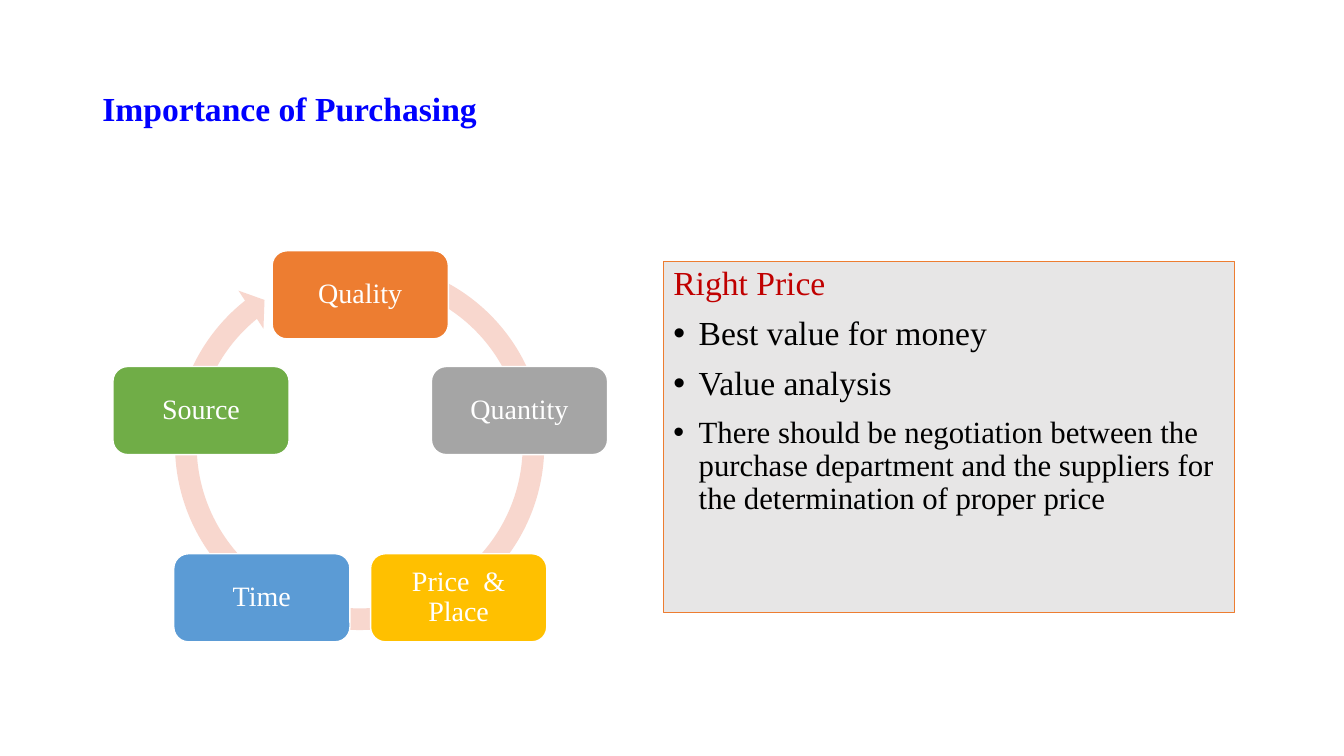
import math

from lxml import etree
from pptx import Presentation
from pptx.dml.color import RGBColor
from pptx.enum.shapes import MSO_SHAPE
from pptx.enum.text import MSO_ANCHOR, PP_ALIGN
from pptx.oxml.ns import qn
from pptx.util import Cm, Pt

RECTANGLE = MSO_SHAPE.RECTANGLE
ROUNDED = MSO_SHAPE.ROUNDED_RECTANGLE
CIRCULAR_ARROW = MSO_SHAPE.CIRCULAR_ARROW
MIDDLE, TOP = MSO_ANCHOR.MIDDLE, MSO_ANCHOR.TOP
LEFT, CENTER = PP_ALIGN.LEFT, PP_ALIGN.CENTER

FONT = "Times New Roman"
CYCLE_CENTER = (9.08, 11.65)
CYCLE_RADIUS = 4.22
NODE_SIZE = (4.44, 2.22)
NODES = [
    ("Quality", "ED7D31"),
    ("Quantity", "A5A5A5"),
    ("Price  & Place", "FFC000"),
    ("Time", "5B9BD5"),
    ("Source", "70AD47"),
]
POINTS = [
    ("Best value for money", 24),
    ("Value analysis", 24),
    ("There should be negotiation between the purchase department and "
     "the suppliers for the determination of proper price", 22),
]


def color(value):
    return RGBColor.from_string(value)


def add_box(slide, kind, bounds, fill, line=None, line_width=1):
    """Add a preset shape; bounds are left, top, width, height in cm."""
    shape = slide.shapes.add_shape(kind, *(Cm(length) for length in bounds))
    shape.shadow.inherit = False
    shape.fill.solid()
    shape.fill.fore_color.rgb = color(fill)
    if line:
        shape.line.color.rgb = color(line)
        shape.line.width = Pt(line_width)
    else:
        shape.line.fill.background()
    return shape


def prepare_frame(shape, anchor, margin=None):
    frame = shape.text_frame
    frame.word_wrap = True
    frame.vertical_anchor = anchor
    if margin is not None:
        frame.margin_left = frame.margin_right = Cm(margin)
        frame.margin_top = frame.margin_bottom = Cm(margin)
    return frame


def add_bullet(paragraph):
    properties = paragraph._p.get_or_add_pPr()
    indent = Cm(0.64)
    properties.set("marL", str(indent))
    properties.set("indent", str(-indent))
    etree.SubElement(properties, qn("a:buFont")).set("typeface", "Arial")
    etree.SubElement(properties, qn("a:buChar")).set("char", "•")


def write(paragraph, text, size, text_color, align=LEFT, bold=False, before=0):
    paragraph.text = text
    paragraph.alignment = align
    paragraph.line_spacing = 0.9
    paragraph.space_before = Pt(before)
    font = paragraph.font
    font.name = FONT
    font.size = Pt(size)
    font.bold = bold
    font.color.rgb = color(text_color)


def add_title(slide):
    title = slide.shapes.add_textbox(Cm(2.33), Cm(1.02), Cm(14.4), Cm(3.56))
    frame = prepare_frame(title, MIDDLE)
    write(frame.paragraphs[0], "Importance of Purchasing", 24, "0000FF", bold=True)


def add_price_panel(slide):
    panel = add_box(slide, RECTANGLE, (16.72, 6.58, 14.4, 8.86),
                    "E7E6E6", "ED7D31", 0.75)
    frame = prepare_frame(panel, TOP)
    write(frame.paragraphs[0], "Right Price", 24, "C00000", before=10)
    for text, size in POINTS:
        paragraph = frame.add_paragraph()
        add_bullet(paragraph)
        write(paragraph, text, size, "000000", before=10)


def add_cycle(slide):
    """Draw the ring arrow and space the nodes clockwise from the top."""
    ring = add_box(slide, CIRCULAR_ARROW, (4.11, 6.27, 9.91, 9.91), "F8D7CE")
    for index, value in enumerate((0.055, 3.307, 138.779, 173.242, 0.058)):
        ring.adjustments[index] = value

    width, height = NODE_SIZE
    center_x, center_y = CYCLE_CENTER
    for index, (label, fill) in enumerate(NODES):
        angle = 2 * math.pi * index / len(NODES)
        left = center_x + CYCLE_RADIUS * math.sin(angle) - width / 2
        top = center_y - CYCLE_RADIUS * math.cos(angle) - height / 2
        node = add_box(slide, ROUNDED, (left, top, width, height), fill, "FFFFFF")
        frame = prepare_frame(node, MIDDLE, margin=0.2)
        write(frame.paragraphs[0], label, 20, "FFFFFF", CENTER)


def main():
    presentation = Presentation()
    presentation.slide_width = Cm(33.87)
    presentation.slide_height = Cm(19.05)
    slide = presentation.slides.add_slide(presentation.slide_layouts[6])
    add_title(slide)
    add_price_panel(slide)
    add_cycle(slide)
    presentation.save("out.pptx")


if __name__ == "__main__":
    main()
